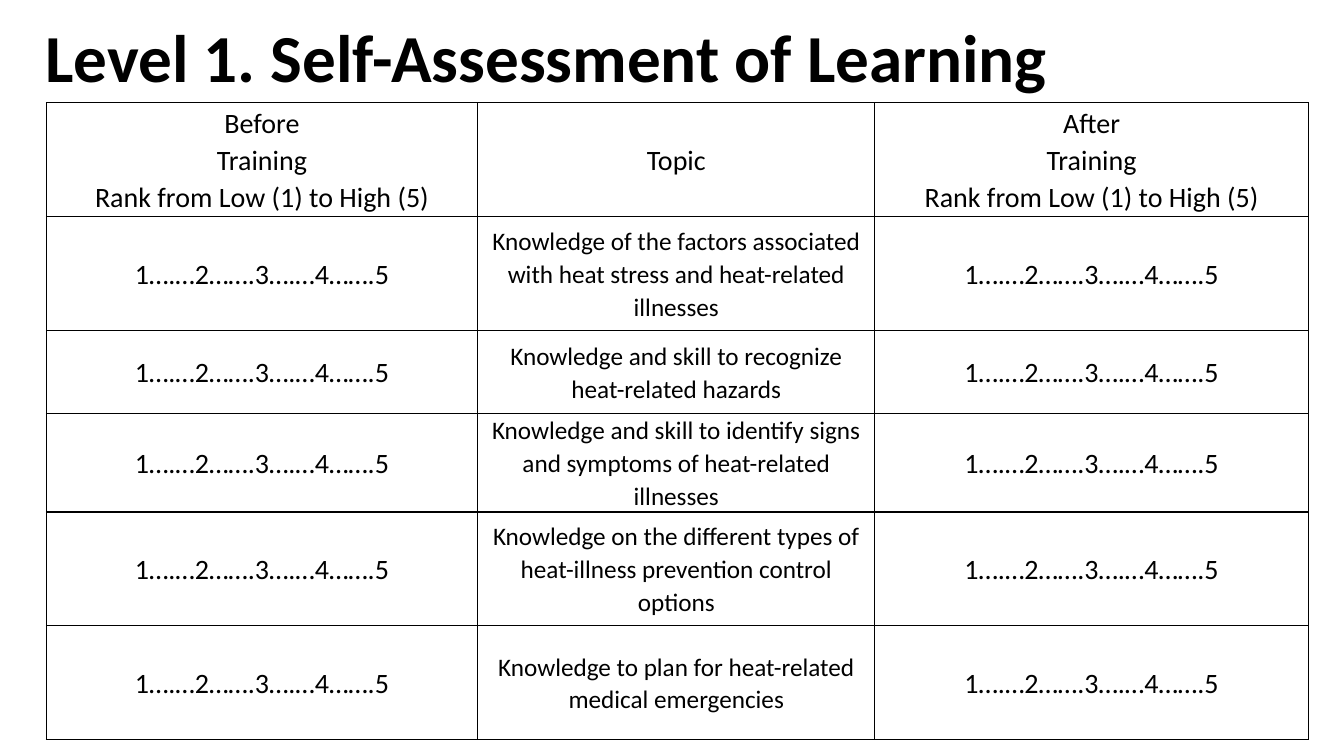
from lxml import etree
from pptx import Presentation
from pptx.dml.color import RGBColor
from pptx.enum import text
from pptx.oxml import ns
from pptx.util import Pt

COLORS = {"ink": "000000", "border": "000000"}
FONT = "Calibri"
SCALE = "1….…2…….3….…4…….5"
RANKING = "Training\nRank from Low (1) to High (5)"
TOPICS = [
    "Knowledge of the factors associated with heat stress and heat-related illnesses",
    "Knowledge and skill to recognize heat-related hazards",
    "Knowledge and skill to identify signs and symptoms of heat-related illnesses",
    "Knowledge on the different types of heat-illness prevention control options",
    "Knowledge to plan for heat-related medical emergencies",
]
COLUMN_WIDTHS = [308.16, 283.68, 309.6]
TALL, SHORT = 81.36, 59.04
ROW_HEIGHTS = [TALL, TALL, SHORT, SHORT, TALL, TALL]


def write_text(frame, wording, size, bold=False, align=text.PP_ALIGN.LEFT, spacing=1.0):
    frame.word_wrap = True
    for index, line in enumerate(wording.split("\n")):
        paragraph = frame.add_paragraph() if index else frame.paragraphs[0]
        paragraph.alignment = align
        paragraph.line_spacing = spacing
        paragraph.space_before = paragraph.space_after = Pt(0)
        run = paragraph.add_run()
        run.text = line
        run.font.name = FONT
        run.font.size = Pt(size)
        run.font.bold = bold
        run.font.color.rgb = RGBColor.from_string(COLORS["ink"])


def add_borders(cell, width=1):
    properties = cell._tc.get_or_add_tcPr()
    for side in ("a:lnL", "a:lnR", "a:lnT", "a:lnB"):
        line = etree.SubElement(properties, ns.qn(side), w=str(Pt(width)))
        fill = etree.SubElement(line, ns.qn("a:solidFill"))
        etree.SubElement(fill, ns.qn("a:srgbClr"), val=COLORS["border"])


def place_heading(slide, left, top, width, height):
    heading = slide.shapes.title
    heading.left, heading.top = Pt(left), Pt(top)
    heading.width, heading.height = Pt(width), Pt(height)
    heading.text_frame.vertical_anchor = text.MSO_ANCHOR.MIDDLE
    write_text(heading.text_frame, "Level 1. Self-Assessment of Learning",
               size=48, bold=True, spacing=0.9)


def place_assessment(slide, left, top, width, height):
    rows = [["Before\n" + RANKING, "Topic", "After\n" + RANKING]]
    rows += [[SCALE, topic, SCALE] for topic in TOPICS]
    assessment = slide.shapes.add_table(len(rows), len(COLUMN_WIDTHS), Pt(left), Pt(top),
                                        Pt(width), Pt(height)).table
    assessment.first_row = assessment.horz_banding = False
    for column, column_width in zip(assessment.columns, COLUMN_WIDTHS):
        column.width = Pt(column_width)
    for row, row_height in zip(assessment.rows, ROW_HEIGHTS):
        row.height = Pt(row_height)
    for row, wordings in zip(assessment.rows, rows):
        for cell, wording in zip(row.cells, wordings):
            is_topic = wording in TOPICS
            cell.margin_left = cell.margin_right = Pt(5 if is_topic else 4.3)
            cell.margin_top = cell.margin_bottom = Pt(0)
            cell.vertical_anchor = text.MSO_ANCHOR.MIDDLE
            add_borders(cell)
            cell.fill.background()
            write_text(cell.text_frame, wording, size=18 if is_topic else 20,
                       align=text.PP_ALIGN.CENTER, spacing=1.07)


def main():
    presentation = Presentation()
    presentation.slide_width, presentation.slide_height = Pt(960), Pt(540)
    slide = presentation.slides.add_slide(presentation.slide_layouts[5])
    place_heading(slide, 25.2, 13.68, 828, 59.76)
    place_assessment(slide, 33.12, 73.44, sum(COLUMN_WIDTHS), sum(ROW_HEIGHTS))
    presentation.save("out.pptx")


if __name__ == "__main__":
    main()
